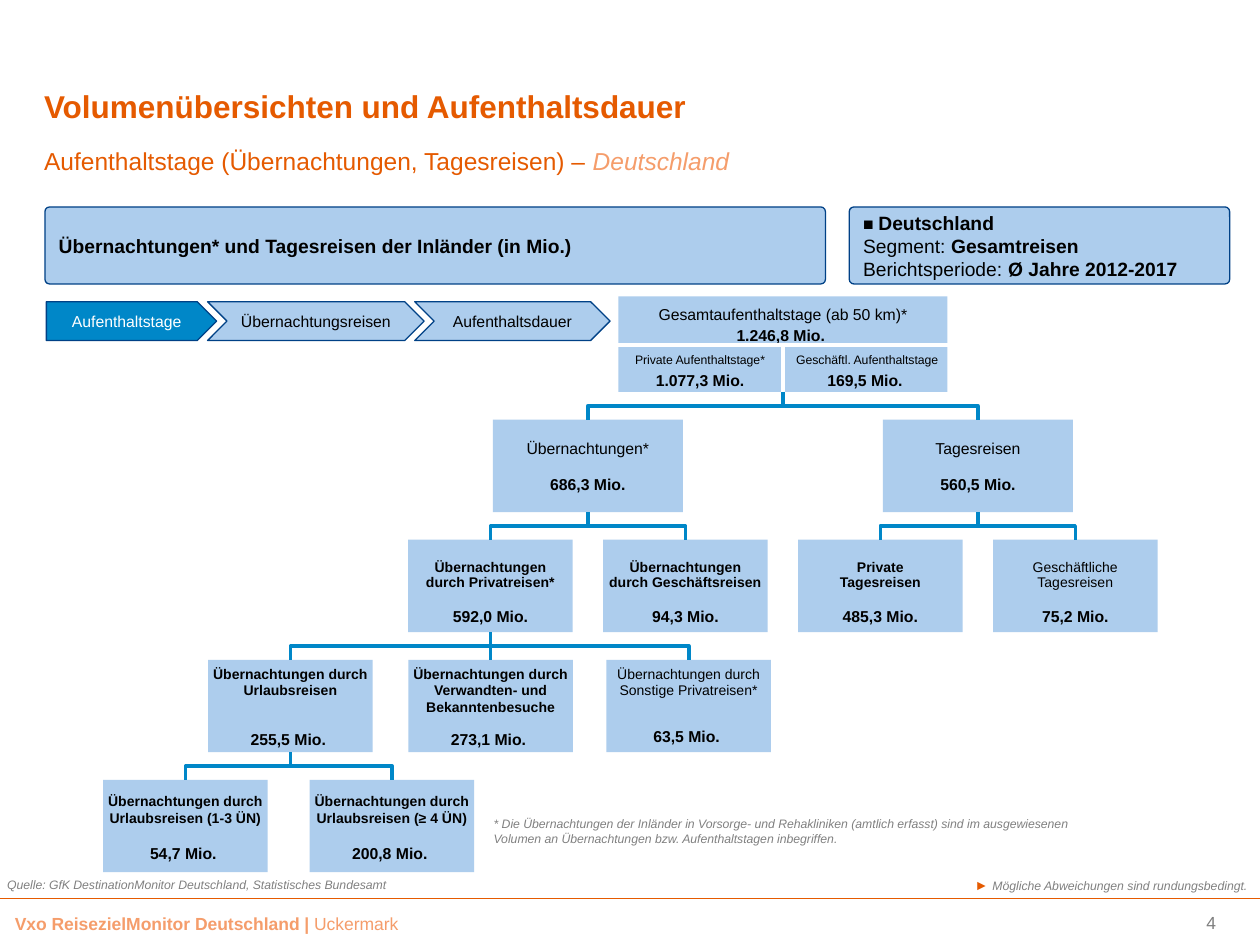
from dataclasses import dataclass

from pptx import Presentation
from pptx.dml.color import RGBColor
from pptx.enum.shapes import MSO_CONNECTOR, MSO_SHAPE
from pptx.enum.text import MSO_ANCHOR, PP_ALIGN
from pptx.oxml.ns import qn
from pptx.util import Pt

LEFT, CENTER, RIGHT = PP_ALIGN.LEFT, PP_ALIGN.CENTER, PP_ALIGN.RIGHT
TOP, MIDDLE, BOTTOM = MSO_ANCHOR.TOP, MSO_ANCHOR.MIDDLE, MSO_ANCHOR.BOTTOM
STRAIGHT = MSO_CONNECTOR.STRAIGHT
RECTANGLE, ROUNDED = MSO_SHAPE.RECTANGLE, MSO_SHAPE.ROUNDED_RECTANGLE
PENTAGON, CHEVRON = MSO_SHAPE.PENTAGON, MSO_SHAPE.CHEVRON


@dataclass(frozen=True)
class Theme:
    font: str = "Arial"
    orange: str = "E55A00"
    pale_orange: str = "F59D6B"
    blue: str = "0087C8"
    pale_blue: str = "ADCDED"
    navy: str = "004186"
    gray: str = "808080"
    page_gray: str = "7F7F7F"
    black: str = "000000"
    white: str = "FFFFFF"
    title: int = 18
    subtitle: int = 14
    header: int = 11
    footer: int = 10
    body: int = 9
    label: int = 8
    note: int = 7


THEME = Theme()
ROW_TOP, ROW_PITCH, BOX_HEIGHT = 239.8, 68.6, 52.8
INSETS = (7.2, 3.6, 7.2, 3.6)
TIGHT = (2, 3, 2, 0)


def rgb(value):
    return RGBColor.from_string(value)


def write(shape, paragraphs, size=THEME.body, color=THEME.black, bold=False,
          italic=False, align=LEFT, anchor=TOP, insets=INSETS, gap=0, spacing=1.0):
    """Fill a shape; each paragraph is a list of (text, overrides) runs."""
    frame = shape.text_frame
    frame.word_wrap = True
    frame.vertical_anchor = anchor
    frame.margin_left, frame.margin_top, frame.margin_right, frame.margin_bottom = map(Pt, insets)
    for index, runs in enumerate(paragraphs):
        paragraph = frame.add_paragraph() if index else frame.paragraphs[0]
        paragraph.alignment = align
        paragraph.line_spacing = spacing
        paragraph.space_before = Pt(gap if index else 0)
        paragraph.space_after = Pt(0)
        for text, overrides in runs:
            look = dict(size=size, color=color, bold=bold, italic=italic) | overrides
            for number, line in enumerate(text.split("\n")):
                if number:
                    paragraph.add_line_break()
                run = paragraph.add_run()
                run.text = line
                run.font.name = THEME.font
                run.font.size = Pt(look["size"])
                run.font.bold = look["bold"]
                run.font.italic = look["italic"]
                run.font.color.rgb = rgb(look["color"])


def add_text(slide, place, paragraphs, **text_format):
    write(slide.shapes.add_textbox(*map(Pt, place)), paragraphs, **text_format)


def add_box(slide, kind, place, paragraphs, fill=THEME.pale_blue, outline=None, **text_format):
    shape = slide.shapes.add_shape(kind, *map(Pt, place))
    shape.shadow.inherit = False
    shape.fill.solid()
    shape.fill.fore_color.rgb = rgb(fill)
    if outline:
        shape.line.color.rgb = rgb(outline)
        shape.line.width = Pt(0.75)
    else:
        shape.line.fill.background()
    write(shape, paragraphs, **text_format)
    return shape


def add_line(slide, points, color, width):
    line = slide.shapes.add_connector(STRAIGHT, *map(Pt, points))
    line.line.color.rgb = rgb(color)
    line.line.width = Pt(width)
    properties = line._element.spPr
    properties.append(properties.makeelement(qn("a:effectLst"), {}))
    return line


def add_elbow(slide, parent, child):
    """Draw a stepped line from the bottom of parent to the top of child."""
    start_x, start_y = parent.left + parent.width // 2, parent.top + parent.height
    end_x = child.left + child.width // 2
    middle_y = (start_y + child.top) // 2
    builder = slide.shapes.build_freeform(start_x, start_y)
    builder.add_line_segments(
        [(start_x, middle_y), (end_x, middle_y), (end_x, child.top)], close=False)
    elbow = builder.convert_to_shape()
    elbow.shadow.inherit = False
    elbow.fill.background()
    elbow.line.color.rgb = rgb(THEME.blue)
    elbow.line.width = Pt(2)


def add_node(slide, row, left, label, value, parent, width=94, label_size=THEME.label,
             label_bold=True, inset=12, gap=10, spacing=1.0):
    place = (left, ROW_TOP + row * ROW_PITCH, width, BOX_HEIGHT)
    node = add_box(slide, RECTANGLE, place,
                   [[(label, dict(size=label_size, bold=label_bold))],
                    [(value, dict(bold=True))]],
                   align=CENTER, insets=(2, inset, 2, 0), gap=gap, spacing=spacing)
    add_elbow(slide, parent, node)
    return node


def add_total(slide):
    total = add_box(slide, RECTANGLE, (353.4, 169.4, 188, 54.6),
                    [[("Gesamtaufenthaltstage (ab 50 km)*\n", {}),
                      ("1.246,8 Mio. ", dict(bold=True))]],
                    align=CENTER, insets=TIGHT, spacing=1.14)
    divider = add_line(slide, (447.4, 197.3, 447.4, 224), THEME.white, 2)
    divider.end_connect(total, 2)
    add_line(slide, (350.6, 197.3, 543.6, 197.3), THEME.white, 2)
    for left, label, value in ((346.5, "Private Aufenthaltstage*", "1.077,3 Mio."),
                               (442, "Geschäftl. Aufenthaltstage", "169,5 Mio. ")):
        add_text(slide, (left, 198.4, 107, 28.8),
                 [[(label, dict(size=THEME.note))], [(value, dict(bold=True))]],
                 align=CENTER, insets=TIGHT, gap=2)
    return total


def add_tree(slide):
    total = add_total(slide)
    first = dict(width=108.6, label_size=THEME.body, label_bold=False, gap=10.7, spacing=0.9)
    nights = add_node(slide, 0, 281.6, "Übernachtungen*", "686,3 Mio.", total, **first)
    days = add_node(slide, 0, 504.5, "Tagesreisen", "560,5 Mio.", total, **first)

    second = (
        (nights, "Übernachtungen\ndurch Privatreisen*", "592,0 Mio.", True),
        (nights, "Übernachtungen\ndurch Geschäftsreisen", "94,3 Mio.", True),
        (days, "Private\nTagesreisen", "485,3 Mio.", True),
        (days, "Geschäftliche\nTagesreisen", "75,2 Mio.", False),
    )
    private, *_ = [
        add_node(slide, 1, 233.3 + 111.4 * column, label, value, parent,
                 label_bold=bold, spacing=0.9)
        for column, (parent, label, value, bold) in enumerate(second)]

    third = (
        (119, "Urlaubsreisen", "255,5 Mio. ", True, 17.6),
        (233.4, "Verwandten- und\nBekanntenbesuche", "273,1 Mio. ", True, 8),
        (346.6, "Sonstige Privatreisen*", "63,5 Mio. ", False, 16),
    )
    holiday, *_ = [
        add_node(slide, 2, left, "Übernachtungen durch\n" + label, value, private,
                 label_bold=bold, inset=3, gap=gap)
        for left, label, value, bold, gap in third]

    for left, length, value in ((59, "1-3", "54,7 Mio. "), (177, "≥ 4", "200,8 Mio. ")):
        add_node(slide, 3, left, f"Übernachtungen durch\nUrlaubsreisen ({length} ÜN)",
                 value, holiday, inset=7.5, gap=9.6)


def add_headings(slide):
    title = slide.shapes.title
    title.left, title.top, title.width, title.height = map(Pt, (25.2, 20.2, 499, 51.1))
    write(title, [[("Volumenübersichten und Aufenthaltsdauer", {})]], size=THEME.title,
          color=THEME.orange, bold=True, anchor=BOTTOM, insets=(0, 0, 0, 0))
    add_text(slide, (25.2, 83.5, 669, 22.3),
             [[("Aufenthaltstage (Übernachtungen, Tagesreisen) – ", {}),
               ("Deutschland", dict(color=THEME.pale_orange, italic=True))]],
             size=THEME.subtitle, color=THEME.orange, insets=(0, 0, 0, 0))

    strong = dict(bold=True)
    panels = (
        (25.7, 446, [[("Übernachtungen* und Tagesreisen der Inländer (in Mio.)", strong)]]),
        (485.3, 217.4, [[("■ ", dict(bold=True, size=THEME.footer)), ("Deutschland", strong)],
                        [("Segment:", {}), (" Gesamtreisen", strong)],
                        [("Berichtsperiode: ", {}), ("Ø Jahre 2012-2017", strong)]]),
    )
    for left, width, paragraphs in panels:
        panel = add_box(slide, ROUNDED, (left, 118.3, width, 44), paragraphs,
                        outline=THEME.navy, size=THEME.header, anchor=MIDDLE)
        panel.adjustments[0] = 0.06


def add_steps(slide):
    steps = (
        (PENTAGON, 26.5, 97.3, "Aufenthaltstage", THEME.blue, THEME.white),
        (CHEVRON, 118.6, 123.8, "Übernachtungsreisen", THEME.pale_blue, THEME.black),
        (CHEVRON, 237, 111.6, "Aufenthaltsdauer", THEME.pale_blue, THEME.black),
    )
    for kind, left, width, label, fill, color in steps:
        add_box(slide, kind, (left, 172.4, width, 22.2), [[(label, {})]], fill=fill,
                outline=THEME.navy, color=color, align=CENTER, anchor=MIDDLE,
                insets=(0, 0, 0, 0))


def add_notes_and_footer(slide):
    note = dict(size=THEME.note, color=THEME.gray, italic=True)
    add_text(slide, (-3, 497.5, 346, 16.5),
             [[("Quelle: GfK DestinationMonitor Deutschland, Statistisches Bundesamt", {})]],
             **note)
    add_text(slide, (275, 463, 348.5, 24.5),
             [[("* Die Übernachtungen der Inländer in Vorsorge- und Rehakliniken (amtlich "
                "erfasst) sind im ausgewiesenen Volumen an Übernachtungen bzw. "
                "Aufenthaltstagen inbegriffen.", {})]], **note)
    add_text(slide, (473.8, 497.5, 246, 15),
             [[("► ", dict(size=THEME.label, color=THEME.orange, italic=False)),
               ("Mögliche Abweichungen sind rundungsbedingt.", {})]], align=RIGHT, **note)
    add_line(slide, (0, 513.2, 720, 513.2), THEME.orange, 0.55)
    add_text(slide, (1.4, 518.4, 484.6, 19.4),
             [[("Vxo ReisezielMonitor Deutschland | ", dict(bold=True)), ("Uckermark", {})]],
             size=THEME.footer, color=THEME.pale_orange)
    add_text(slide, (592.6, 521.3, 102.2, 11.5), [[("4", {})]], size=THEME.footer,
             color=THEME.page_gray, align=RIGHT, anchor=MIDDLE, insets=(0, 0, 0, 0))


def main():
    presentation = Presentation()
    presentation.slide_width, presentation.slide_height = Pt(720), Pt(540)
    slide = presentation.slides.add_slide(presentation.slide_layouts[5])
    add_headings(slide)
    add_steps(slide)
    add_tree(slide)
    add_notes_and_footer(slide)
    presentation.save("out.pptx")


if __name__ == "__main__":
    main()
